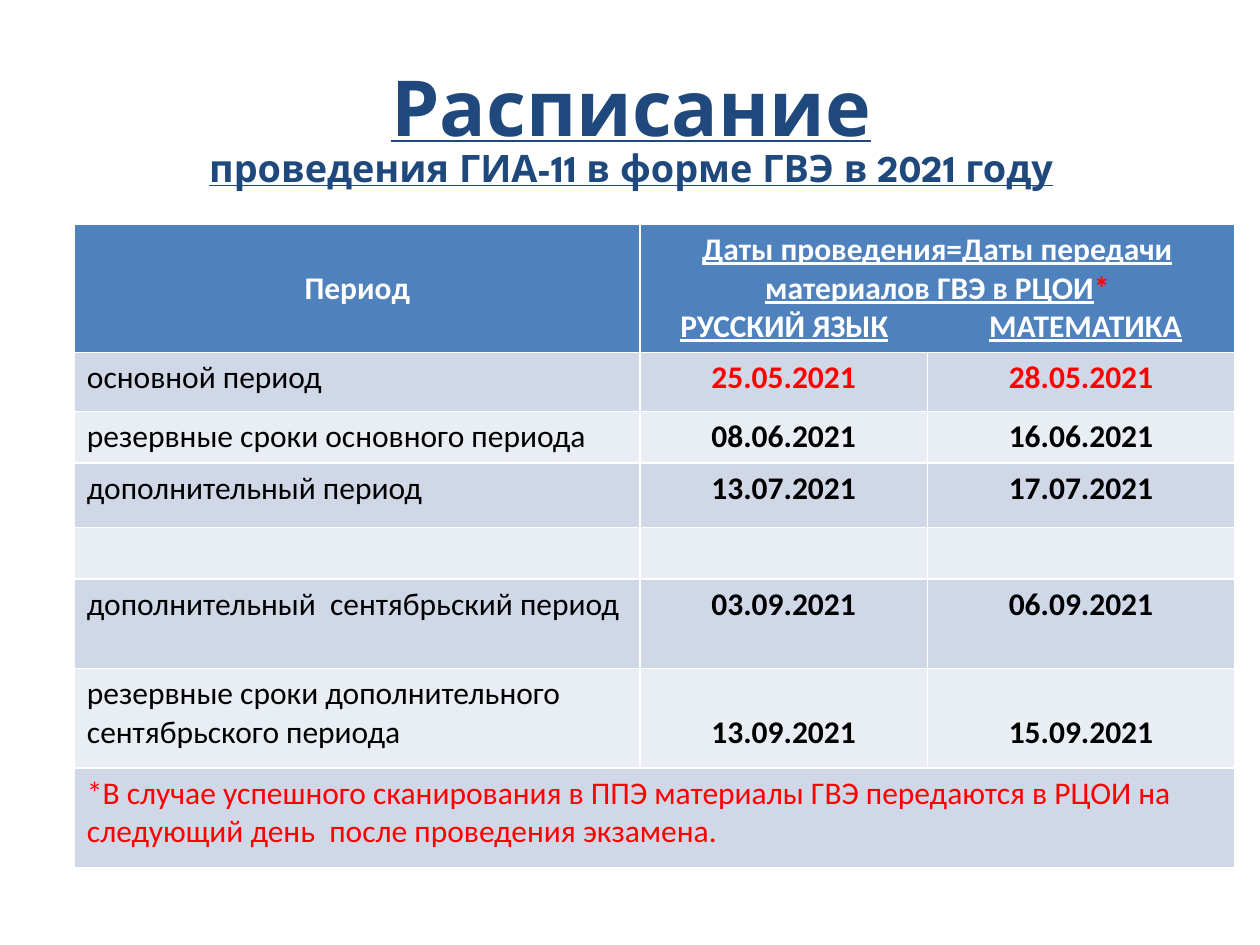
from dataclasses import dataclass

from lxml import etree
from pptx import Presentation
from pptx.dml.color import RGBColor
from pptx.enum.text import MSO_ANCHOR, PP_ALIGN
from pptx.oxml.ns import qn
from pptx.util import Inches, Pt

LEFT, CENTER = PP_ALIGN.LEFT, PP_ALIGN.CENTER
TOP, MIDDLE, BOTTOM = MSO_ANCHOR.TOP, MSO_ANCHOR.MIDDLE, MSO_ANCHOR.BOTTOM
TITLE_ONLY = 5


@dataclass(frozen=True)
class Theme:
    title_font: str = "League Spartan"
    body_font: str = "Calibri"
    title_size: float = 44.1
    subtitle_size: float = 21.6
    body_size: float = 18
    navy: str = "1F497D"
    header: str = "4F81BD"
    bands: tuple = ("D0D8E8", "E9EDF4")
    white: str = "FFFFFF"
    black: str = "000000"
    red: str = "FF0000"


THEME = Theme()

COLUMNS = (4.49, 2.28, 2.44)
ROWS = (1.0, 0.47, 0.41, 0.51, 0.41, 0.71, 0.79, 0.79)
SUBJECT_TABS = (0.22, 2.67)
SCHEDULE = (
    ("основной период", "25.05.2021", "28.05.2021"),
    ("резервные сроки основного периода", "08.06.2021", "16.06.2021"),
    ("дополнительный период", "13.07.2021", "17.07.2021"),
    ("", "", ""),
    ("дополнительный  сентябрьский период", "03.09.2021", "06.09.2021"),
    ("резервные сроки дополнительного  сентябрьского периода",
     "13.09.2021", "15.09.2021"),
)
FOOTNOTE = ("*В случае успешного сканирования в ППЭ материалы ГВЭ передаются "
            "в РЦОИ на следующий день  после проведения экзамена.")


def add_span(para, text, color, bold=False, underline=False,
             font=THEME.body_font, size=THEME.body_size):
    span = para.add_run()
    span.text = text
    span.font.name = font
    span.font.size = Pt(size)
    span.font.bold = bold
    span.font.underline = underline
    span.font.color.rgb = RGBColor.from_string(color)


def fill_cell(cell, fill, text="", color=THEME.black, bold=False,
              align=LEFT, anchor=TOP):
    cell.fill.solid()
    cell.fill.fore_color.rgb = RGBColor.from_string(fill)
    cell.vertical_anchor = anchor
    para = cell.text_frame.paragraphs[0]
    para.alignment = align
    if text:
        add_span(para, text, color, bold)
    return para


def add_tab_stops(para, stops):
    tab_list = etree.SubElement(para._p.get_or_add_pPr(), qn("a:tabLst"))
    for stop in stops:
        etree.SubElement(tab_list, qn("a:tab"), pos=str(Inches(stop)), algn="l")


def place_title(page, left, top, width, height):
    title = page.shapes.title
    title.left, title.top = Inches(left), Inches(top)
    title.width, title.height = Inches(width), Inches(height)
    frame = title.text_frame
    frame.word_wrap = True
    frame.vertical_anchor = TOP
    frame.margin_top = Inches(0.29)
    para = frame.paragraphs[0]
    para.alignment = CENTER
    para.line_spacing = 0.85
    style = dict(color=THEME.navy, bold=True, underline=True,
                 font=THEME.title_font)
    add_span(para, "Расписание", size=THEME.title_size, **style)
    para.add_line_break()
    add_span(para, "проведения ГИА-11 в форме ГВЭ в 2021 году",
             size=THEME.subtitle_size, **style)


def fill_header(table):
    fill_cell(table.cell(0, 0), THEME.header, "Период", THEME.white, True,
              CENTER, MIDDLE)
    dates = table.cell(0, 1)
    dates.merge(table.cell(0, 2))
    para = fill_cell(dates, THEME.header, align=CENTER)
    add_span(para, "Даты проведения=Даты передачи материалов ГВЭ в РЦОИ",
             THEME.white, True, True)
    add_span(para, "*", THEME.red, True)
    subjects = dates.text_frame.add_paragraph()
    subjects.alignment = LEFT
    add_tab_stops(subjects, SUBJECT_TABS)
    for subject in ("РУССКИЙ ЯЗЫК", "МАТЕМАТИКА"):
        add_span(subjects, "\t", THEME.white, True)
        add_span(subjects, subject, THEME.white, True, True)


def place_schedule(page, left, top):
    table = page.shapes.add_table(
        len(ROWS), len(COLUMNS), Inches(left), Inches(top),
        Inches(sum(COLUMNS)), Inches(sum(ROWS))).table
    for column, width in zip(table.columns, COLUMNS):
        column.width = Inches(width)
    for row, height in zip(table.rows, ROWS):
        row.height = Inches(height)
    fill_header(table)

    for index, (period, *dates) in enumerate(SCHEDULE):
        band = THEME.bands[index % 2]
        fill_cell(table.cell(index + 1, 0), band, period)
        color = THEME.red if index == 0 else THEME.black
        last = index == len(SCHEDULE) - 1
        for column, date in enumerate(dates, 1):
            cell = table.cell(index + 1, column)
            fill_cell(cell, band, date, color, True, CENTER,
                      BOTTOM if last else TOP)
            if last:
                cell.margin_bottom = Inches(0.13)

    note = table.cell(len(ROWS) - 1, 0)
    note.merge(table.cell(len(ROWS) - 1, len(COLUMNS) - 1))
    fill_cell(note, THEME.bands[0], FOOTNOTE, THEME.red)


def main():
    deck = Presentation()
    deck.slide_width, deck.slide_height = Inches(10), Inches(7.5)
    page = deck.slides.add_slide(deck.slide_layouts[TITLE_ONLY])
    place_title(page, 0.51, 0.29, 9, 0.87)
    place_schedule(page, 0.59, 1.78)
    deck.save("out.pptx")


if __name__ == "__main__":
    main()
